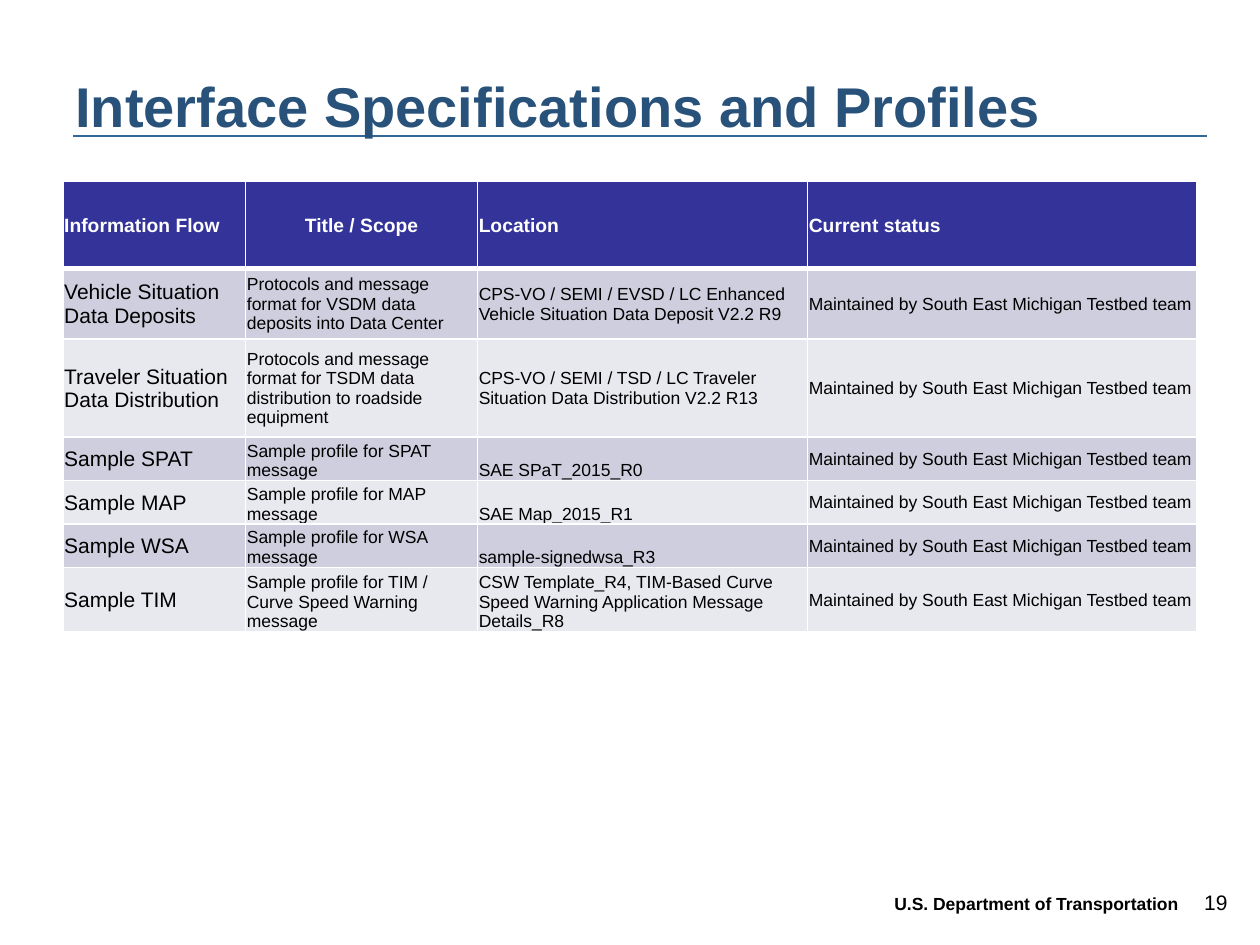
from pptx import Presentation
from pptx.dml.color import RGBColor
from pptx.enum.shapes import MSO_CONNECTOR as Link
from pptx.enum.text import MSO_ANCHOR as Anchor, PP_ALIGN as Align
from pptx.oxml.ns import qn
from pptx.util import Inches, Pt
from lxml.etree import SubElement as Sub

FLOWS = [
    ("Vehicle Situation Data Deposits",
     "Protocols and message format for VSDM data deposits into Data Center",
     "CPS-VO / SEMI / EVSD / LC Enhanced Vehicle Situation Data Deposit V2.2 R9"),
    ("Traveler Situation Data Distribution",
     "Protocols and message format for TSDM data distribution to roadside equipment",
     "CPS-VO / SEMI / TSD / LC Traveler Situation Data Distribution V2.2 R13"),
    ("Sample SPAT", "Sample profile for SPAT message", "SAE SPaT_2015_R0"),
    ("Sample MAP", "Sample profile for MAP message", "SAE Map_2015_R1"),
    ("Sample WSA", "Sample profile for WSA message", "sample-signedwsa_R3"),
    ("Sample TIM", "Sample profile for TIM / Curve Speed Warning message",
     "CSW Template_R4, TIM-Based Curve Speed Warning Application Message Details_R8"),
]
HEADS = ("Information Flow", "Title / Scope", "Location", "Current status")
STATUS = "Maintained by South East Michigan Testbed team"
WIDTHS = (1.45, 1.84, 2.62, 3.09)
HEIGHTS = (0.69, 0.56, 0.78, 0.32, 0.32, 0.32, 0.46)


def color(code):
    return RGBColor.from_string(code)


def write(frame, text, size, ink="000000", bold=False, align=Align.LEFT):
    para = frame.paragraphs[0]
    para.alignment = align
    run = para.add_run()
    run.text = text
    font = run.font
    font.name, font.size, font.bold = "Arial", Pt(size), bold
    font.color.rgb = color(ink)
    return para


def add_text(slide, box, text, size, anchor=Anchor.TOP, **style):
    frame = slide.shapes.add_textbox(*map(Inches, box)).text_frame
    frame.word_wrap = True
    frame.vertical_anchor = anchor
    return write(frame, text, size, **style)


def add_title(slide, box):
    left, top, width, height = box
    start, base = left + 0.08, top + 0.66
    rule = slide.shapes.add_connector(
        Link.STRAIGHT, Inches(start), Inches(base), Inches(start + width), Inches(base))
    rule.line.color.rgb = color("336699")
    rule.line.width = Pt(1.5)
    Sub(rule._element.spPr, qn("a:effectLst"))
    add_text(slide, box, "Interface Specifications and Profiles", 32,
             Anchor.MIDDLE, ink="29527B", bold=True)


def add_border(cell, side, width):
    line = Sub(cell._tc.get_or_add_tcPr(), qn("a:" + side), w=str(Pt(width)))
    fill = Sub(line, qn("a:solidFill"))
    Sub(fill, qn("a:srgbClr"), val="FFFFFF")


def fill_cell(cell, text, row, col):
    head = row == 0
    cell.margin_left = cell.margin_right = cell.margin_top = Inches(0.01)
    cell.margin_bottom = 0
    low = row > 2 and col in (1, 2)
    cell.vertical_anchor = Anchor.BOTTOM if low else Anchor.MIDDLE
    for side in ("lnL", "lnR", "lnT", "lnB"):
        thick = (head and side == "lnB") or (row == 1 and side == "lnT")
        add_border(cell, side, 3 if thick else 1)
    cell.fill.solid()
    shade = "333399" if head else ("E8E8EF", "CECEDE")[row % 2]
    cell.fill.fore_color.rgb = color(shade)
    if head:
        align = Align.CENTER if col == 1 else Align.LEFT
        write(cell.text_frame, text, 11, "FFFFFF", True, align)
    else:
        write(cell.text_frame, text, 12 if col == 0 else 10)


def add_flows(slide, box):
    rows = [HEADS] + [flow + (STATUS,) for flow in FLOWS]
    table = slide.shapes.add_table(len(rows), len(HEADS), *map(Inches, box)).table
    for col, width in zip(table.columns, WIDTHS):
        col.width = Inches(width)
    for row, height in zip(table.rows, HEIGHTS):
        row.height = Inches(height)
    for i, row in enumerate(rows):
        for j, text in enumerate(row):
            fill_cell(table.cell(i, j), text, i, j)


def add_footer(slide, box):
    left, top, width, height = box
    add_text(slide, (left + 2.42, top, 0.42, height), "19", 12, align=Align.RIGHT)
    para = add_text(slide, (left, top + 0.07, 2.75, height - 0.07),
                    "U.S. Department of Transportation", 10, bold=True)
    para.line_spacing = Pt(9)


def main():
    deck = Presentation()
    deck.slide_width, deck.slide_height = Inches(10), Inches(7.5)
    slide = deck.slides.add_slide(deck.slide_layouts[6])
    add_title(slide, (0.5, 0.42, 9, 0.83))
    add_flows(slide, (0.5, 1.44, sum(WIDTHS), sum(HEIGHTS)))
    add_footer(slide, (7, 7.01, 2.84, 0.3))
    deck.save("out.pptx")


if __name__ == "__main__":
    main()
